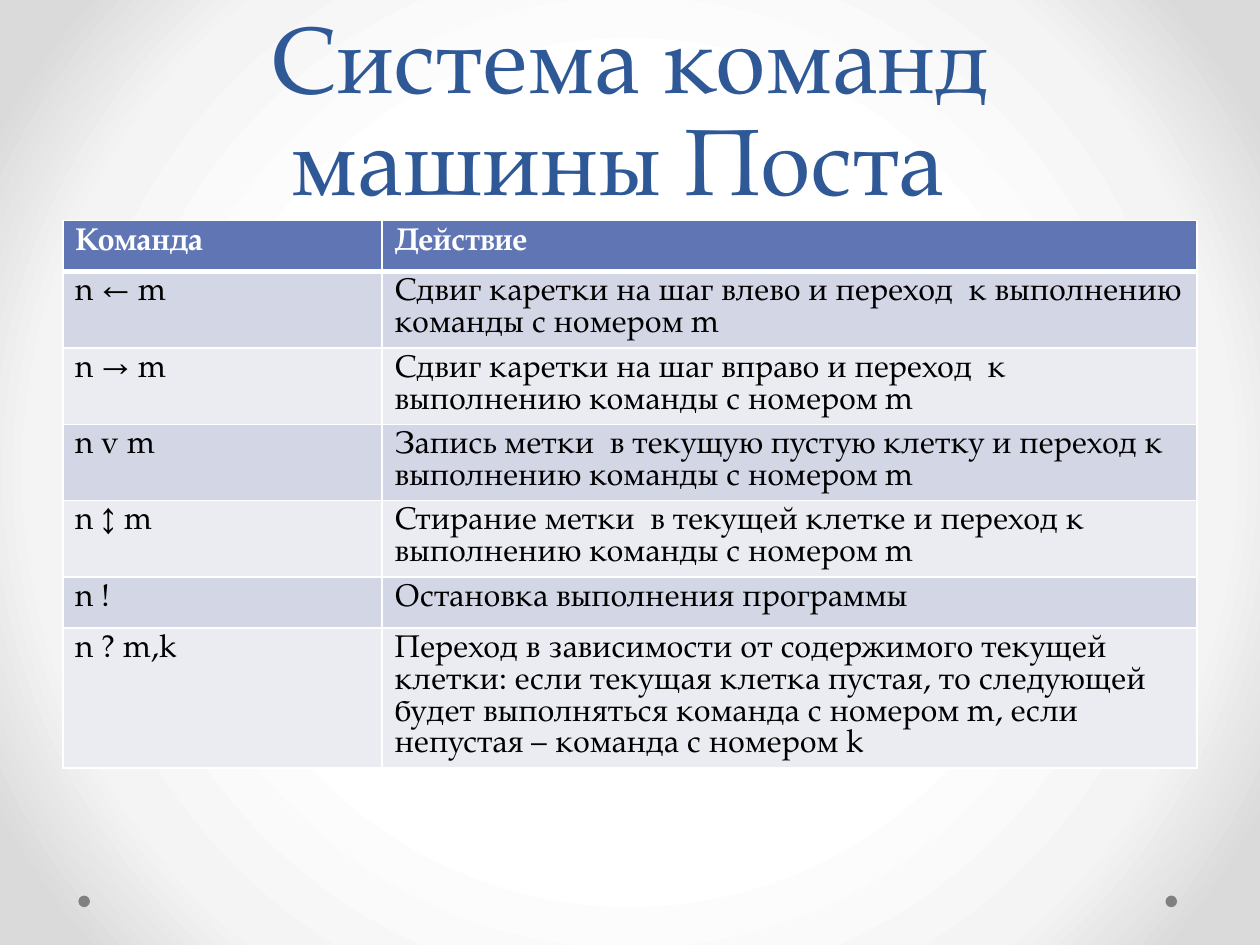
from pptx import Presentation
from pptx.dml.color import RGBColor
from pptx.enum.shapes import MSO_SHAPE
from pptx.enum.text import MSO_ANCHOR, PP_ALIGN
from pptx.oxml import parse_xml
from pptx.oxml.ns import nsdecls
from pptx.util import Pt

FONT = "TeX Gyre Pagella"
WHITE = RGBColor(0xFF, 0xFF, 0xFF)
BLACK = RGBColor(0, 0, 0)
NAVY = RGBColor(0x2F, 0x58, 0x97)
BLUE = RGBColor(0x60, 0x76, 0xB4)
DARK = RGBColor(0xD2, 0xD6, 0xE5)
LIGHT = RGBColor(0xEA, 0xEC, 0xF2)
GREY = RGBColor(0x80, 0x80, 0x80)
SHADES = [(50, WHITE), (76, RGBColor(0xF4, 0xF4, 0xF4)),
          (92, RGBColor(0xDA, 0xDA, 0xDA))]

# Row heights by number of text lines
ONE, TWO, FOUR = 29.2, 43.4, 80
ROWS = [
    (ONE, "Команда", "Действие"),
    (TWO, "n ← m", "Сдвиг каретки на шаг влево и переход  к выполнению команды с номером m"),
    (TWO, "n → m", "Сдвиг каретки на шаг вправо и переход  к выполнению команды с номером m"),
    (TWO, "n v m", "Запись метки  в текущую пустую клетку и переход к выполнению команды с номером m"),
    (TWO, "n ↕ m", "Стирание метки  в текущей клетке и переход к выполнению команды с номером m"),
    (ONE, "n !", "Остановка выполнения программы"),
    (FOUR, "n ? m,k", "Переход в зависимости от содержимого текущей клетки: если текущая "
                      "клетка пустая, то следующей будет выполняться команда с номером m, "
                      "если непустая – команда с номером k"),
]


class Page:
    def __init__(self, slide, font):
        self.slide = slide
        self.font = font

    def style(self, para, size, space, color, bold=False):
        para.line_spacing = Pt(space)
        para.font.name = self.font
        para.font.size = Pt(size)
        para.font.bold = bold
        para.font.color.rgb = color

    def glow(self, shades):
        """Radial background gradient."""
        stops = "".join(f'<a:gs pos="{pos * 1000}"><a:srgbClr val="{color}"/></a:gs>'
                        for pos, color in shades)
        back = parse_xml(
            f'<p:bg {nsdecls("p", "a")}><p:bgPr><a:gradFill rotWithShape="1">'
            f'<a:gsLst>{stops}</a:gsLst><a:path path="circle">'
            '<a:fillToRect l="50000" t="50000" r="50000" b="50000"/></a:path>'
            '</a:gradFill><a:effectLst/></p:bgPr></p:bg>')
        self.slide.element.cSld.insert(0, back)

    def dot(self, x, y, size, color):
        shape = self.slide.shapes.add_shape(
            MSO_SHAPE.OVAL, Pt(x), Pt(y), Pt(size), Pt(size))
        shape.shadow.inherit = False
        shape.fill.solid()
        shape.fill.fore_color.rgb = color
        shape.line.fill.background()

    def title(self, text, x, y, width, height):
        frame = self.slide.shapes.add_textbox(
            Pt(x), Pt(y), Pt(width), Pt(height)).text_frame
        frame.word_wrap = True
        frame.vertical_anchor = MSO_ANCHOR.BOTTOM
        para = frame.paragraphs[0]
        para.text = text
        para.alignment = PP_ALIGN.CENTER
        self.style(para, 54, 58, NAVY)

    def edge(self, cell, widths):
        """White borders; widths are left, right, top, bottom."""
        props = cell._tc.get_or_add_tcPr()
        for place, (side, width) in enumerate(zip("LRTB", widths)):
            props.insert(place, parse_xml(
                f'<a:ln{side} {nsdecls("a")} w="{Pt(width)}"><a:solidFill>'
                f'<a:srgbClr val="{WHITE}"/></a:solidFill></a:ln{side}>'))

    def table(self, rows, x, y, cols):
        table = self.slide.shapes.add_table(
            len(rows), len(cols), Pt(x), Pt(y), Pt(sum(cols)),
            Pt(sum(row[0] for row in rows))).table
        for col, width in zip(table.columns, cols):
            col.width = Pt(width)
        for r, (height, *texts) in enumerate(rows):
            table.rows[r].height = Pt(height)
            head = r == 0
            fill = BLUE if head else DARK if r % 2 else LIGHT
            for c, text in enumerate(texts):
                cell = table.cell(r, c)
                cell.text = text
                cell.fill.solid()
                cell.fill.fore_color.rgb = fill
                self.style(cell.text_frame.paragraphs[0], 18, 18.2,
                           WHITE if head else BLACK, head)
                self.edge(cell, (1, 1, 3 if r == 1 else 1, 3 if head else 1))


def main():
    deck = Presentation()
    deck.slide_width, deck.slide_height = Pt(720), Pt(540)
    page = Page(deck.slides.add_slide(deck.slide_layouts[6]), FONT)

    # Background and corner dots
    page.glow(SHADES)
    for x in (666, 44.8):
        page.dot(x, 511.8, 6.6, GREY)

    # Title and command table
    page.title("Система команд машины Поста ", 36, 0, 648, 126)
    page.table(ROWS, 36, 126, (182.3, 465.7))

    deck.save("out.pptx")


if __name__ == "__main__":
    main()
